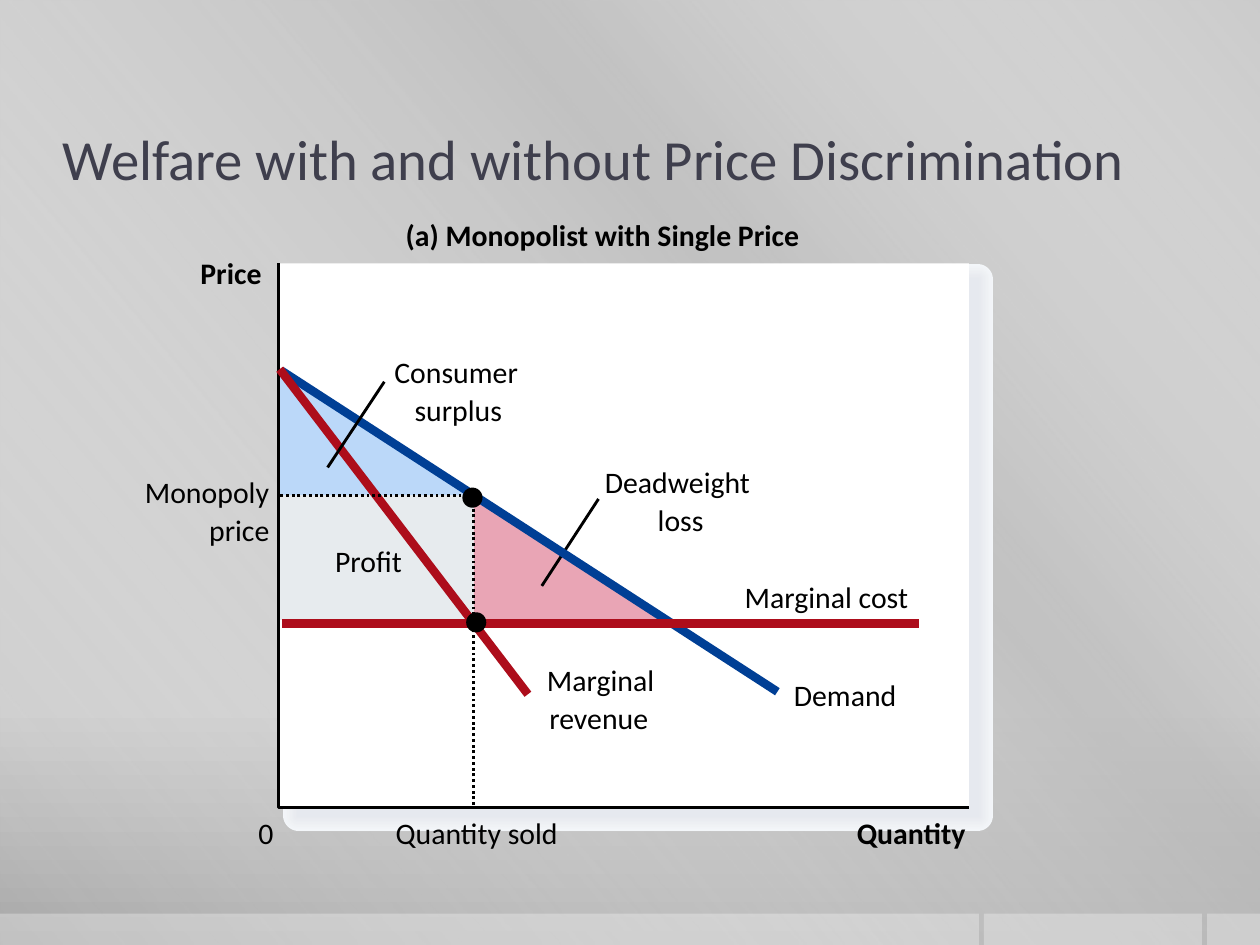
from dataclasses import dataclass

from lxml import etree
from pptx import Presentation
from pptx.dml.color import RGBColor
from pptx.enum.dml import MSO_LINE
from pptx.enum.shapes import MSO_CONNECTOR, MSO_SHAPE
from pptx.enum.text import MSO_ANCHOR, MSO_AUTO_SIZE
from pptx.oxml.ns import qn
from pptx.util import Inches, Pt

RECT, OVAL = MSO_SHAPE.RECTANGLE, MSO_SHAPE.OVAL
STRAIGHT = MSO_CONNECTOR.STRAIGHT
DOTTED = MSO_LINE.ROUND_DOT
MIDDLE = MSO_ANCHOR.MIDDLE
GROW = MSO_AUTO_SIZE.SHAPE_TO_FIT_TEXT


@dataclass(frozen=True)
class Theme:
    font: str = "Calibri"
    title_size: float = 32.4
    label_size: float = 17
    thin: float = 1.63
    thick: float = 4.88
    title: str = "3F3F4D"
    ink: str = "000000"
    white: str = "FFFFFF"
    demand: str = "003F95"
    cost: str = "AD0D1B"
    surplus: str = "BBD8F9"
    profit: str = "E7EBEE"
    deadweight: str = "E9A5B5"
    backdrop: tuple = ((0, "CBCBCB", 100), (76, "C8C8C8", 100), (100, "A7A7A7", 100))
    sheen: tuple = ((0, "FFFFFF", 0), (34, "BFBFBF", 61), (38, "BFBFBF", 76), (100, "FFFFFF", 0))
    glow: tuple = ("F3F6F9", "F2F4F8", "F1F4F7", "F0F2F5", "EEF1F4", "EDEFF3",
                   "EBEEF2", "EAECF1", "E9EBF0", "E7EAEF", "E6E9EF")


THEME = Theme()


@dataclass(frozen=True)
class Box:
    x: float
    y: float
    w: float
    h: float

    def point(self, dx, dy):
        return Inches(self.x + dx), Inches(self.y + dy)

    def inner(self, dx, dy, w, h):
        return Box(self.x + dx, self.y + dy, w, h)

    def frame(self):
        return Inches(self.x), Inches(self.y), Inches(self.w), Inches(self.h)


def set_alpha(color_element, percent):
    etree.SubElement(color_element, qn("a:alpha")).set("val", str(percent * 1000))


def set_gradient(fill, owner, stops, angle):
    fill.gradient()
    fill.gradient_angle = 360 - angle
    stop_list = owner.find(".//" + qn("a:gsLst"))
    for old_stop in list(stop_list):
        stop_list.remove(old_stop)
    for position, color, alpha in stops:
        stop = etree.SubElement(stop_list, qn("a:gs"), pos=str(position * 1000))
        color_element = etree.SubElement(stop, qn("a:srgbClr"), val=color)
        if alpha < 100:
            set_alpha(color_element, alpha)


def style_line(line, color, width):
    line.color.rgb = RGBColor.from_string(color)
    line.width = Pt(width)


def fill_solid(shape, color):
    shape.shadow.inherit = False
    shape.fill.solid()
    shape.fill.fore_color.rgb = RGBColor.from_string(color)
    shape.line.fill.background()


def add_solid(slide, kind, box, color):
    solid = slide.shapes.add_shape(kind, *box.frame())
    fill_solid(solid, color)
    return solid


def add_outline(slide, box, points, closed):
    start, *rest = [box.point(*point) for point in points]
    builder = slide.shapes.build_freeform(*start, scale=1.0)
    builder.add_line_segments(rest, close=closed)
    return builder.convert_to_shape()


def add_area(slide, box, points, color):
    fill_solid(add_outline(slide, box, points, True), color)


def add_open_line(slide, box, points):
    outline = add_outline(slide, box, points, False)
    outline.shadow.inherit = False
    outline.fill.background()
    style_line(outline.line, THEME.ink, THEME.thin)
    return outline


def add_line(slide, box, start, end, color, width):
    line = slide.shapes.add_connector(STRAIGHT, *box.point(*start), *box.point(*end))
    style_line(line.line, color, width)
    etree.SubElement(line._element.spPr, qn("a:effectLst"))


def add_text(slide, box, text, size, color, bold=False):
    text_box = slide.shapes.add_textbox(*box.frame())
    frame = text_box.text_frame
    frame.margin_left = frame.margin_right = frame.margin_top = frame.margin_bottom = 0
    frame.text = text
    font = frame.paragraphs[0].runs[0].font
    font.name, font.size, font.bold = THEME.font, Pt(size), bold
    font.color.rgb = RGBColor.from_string(color)
    return frame


def add_label(slide, box, text, dx, dy, width, bold=False):
    frame = add_text(slide, box.inner(dx, dy, width, 0.28), text,
                     THEME.label_size, THEME.ink, bold)
    frame.word_wrap = False
    frame.auto_size = GROW


def draw_backdrop(slide, box):
    set_gradient(slide.background.fill, slide._element, THEME.backdrop, 90)
    sheen = add_solid(slide, RECT, box, THEME.white)
    set_gradient(sheen.fill, sheen._element, THEME.sheen, 140)
    for left, width in ((9.58, 0.42), (7.81, 1.73), (0, 7.77)):
        strip = add_solid(slide, RECT, box.inner(left, box.h - 0.25, width, 0.25), THEME.white)
        set_alpha(strip._element.spPr.find(".//" + qn("a:srgbClr")), 30)


def draw_title(slide, box):
    frame = add_text(slide, box, "Welfare with and without Price Discrimination",
                     THEME.title_size, THEME.title)
    frame.word_wrap = True
    frame.vertical_anchor = MIDDLE


def draw_panel(slide, box):
    for step, color in enumerate(THEME.glow):
        layer = add_solid(slide, RECT, box.inner(0.16, 0.13, 5.39, 4.25), color)
        style_line(layer.line, color, 1.62 * (len(THEME.glow) - step))
    add_solid(slide, RECT, box, THEME.white)


def draw_market(slide, box):
    sold, choke, price, cost = 1.55, 0.85, 1.84, 2.83
    marginal_cost = cost + 0.03

    add_area(slide, box, [(sold, price), (sold, cost), (2 * sold, cost)], THEME.deadweight)
    add_solid(slide, RECT, box.inner(0, price, sold, cost - price), THEME.profit)
    add_label(slide, box, "Profit", 0.45, 2.22, 0.55)
    add_area(slide, box, [(0, price), (sold, price), (0, choke)], THEME.surplus)
    add_open_line(slide, box, [(0, 0), (0, box.h), (box.w, box.h)])

    for text, dx, dy, width in (
        ("(a) Monopolist with Single Price", 1.01, -0.37, 3.57),
        ("Price", -0.62, -0.07, 0.58),
        ("Quantity", 4.59, 4.38, 0.96),
    ):
        add_label(slide, box, text, dx, dy, width, bold=True)

    for start, end, color, width in (
        ((2.09, 2.56), (2.54, 1.87), THEME.ink, THEME.thin),
        ((0.02, choke), (3.96, 3.4), THEME.demand, THEME.thick),
        ((0.01, 0.84), (1.98, 3.42), THEME.cost, THEME.thick),
        ((0.39, 1.62), (0.84, 0.94), THEME.ink, THEME.thin),
    ):
        add_line(slide, box, start, end, color, width)

    guides = add_open_line(slide, box, [(sold, 4.3), (sold, price), (0, price)])
    guides.line.dash_style = DOTTED
    add_solid(slide, OVAL, box.inner(1.46, 1.78, 0.16, 0.16), THEME.ink)
    add_line(slide, box, (0.03, marginal_cost), (5.08, marginal_cost), THEME.cost, THEME.thick)
    add_solid(slide, OVAL, box.inner(1.49, 2.77, 0.16, 0.16), THEME.ink)

    for text, dx, dy, width in (
        ("0", -0.16, 4.38, 0.13),
        ("Quantity sold", 0.93, 4.38, 1.38),
        ("Monopoly", -1.06, 1.67, 1.03),
        ("price", -0.55, 1.97, 0.51),
        ("Consumer", 0.92, 0.72, 1.09),
        ("surplus", 1.08, 1.02, 0.76),
        ("Deadweight", 2.59, 1.59, 1.25),
        ("loss", 3.01, 1.89, 0.42),
        ("Marginal cost", 3.7, 2.5, 1.41),
        ("Demand", 4.09, 3.28, 0.89),
        ("Marginal", 2.13, 3.16, 0.91),
        ("revenue", 2.15, 3.46, 0.86),
    ):
        add_label(slide, box, text, dx, dy, width)


def main():
    page = Box(0, 0, 10, 7.5)
    plot = Box(2.21, 2.09, 5.48, 4.32)
    deck = Presentation()
    deck.slide_width, deck.slide_height = Inches(page.w), Inches(page.h)
    slide = deck.slides.add_slide(deck.slide_layouts[6])
    draw_backdrop(slide, page)
    draw_title(slide, Box(0.5, 0.75, 9, 1))
    draw_panel(slide, plot)
    draw_market(slide, plot)
    deck.save("out.pptx")


if __name__ == "__main__":
    main()
